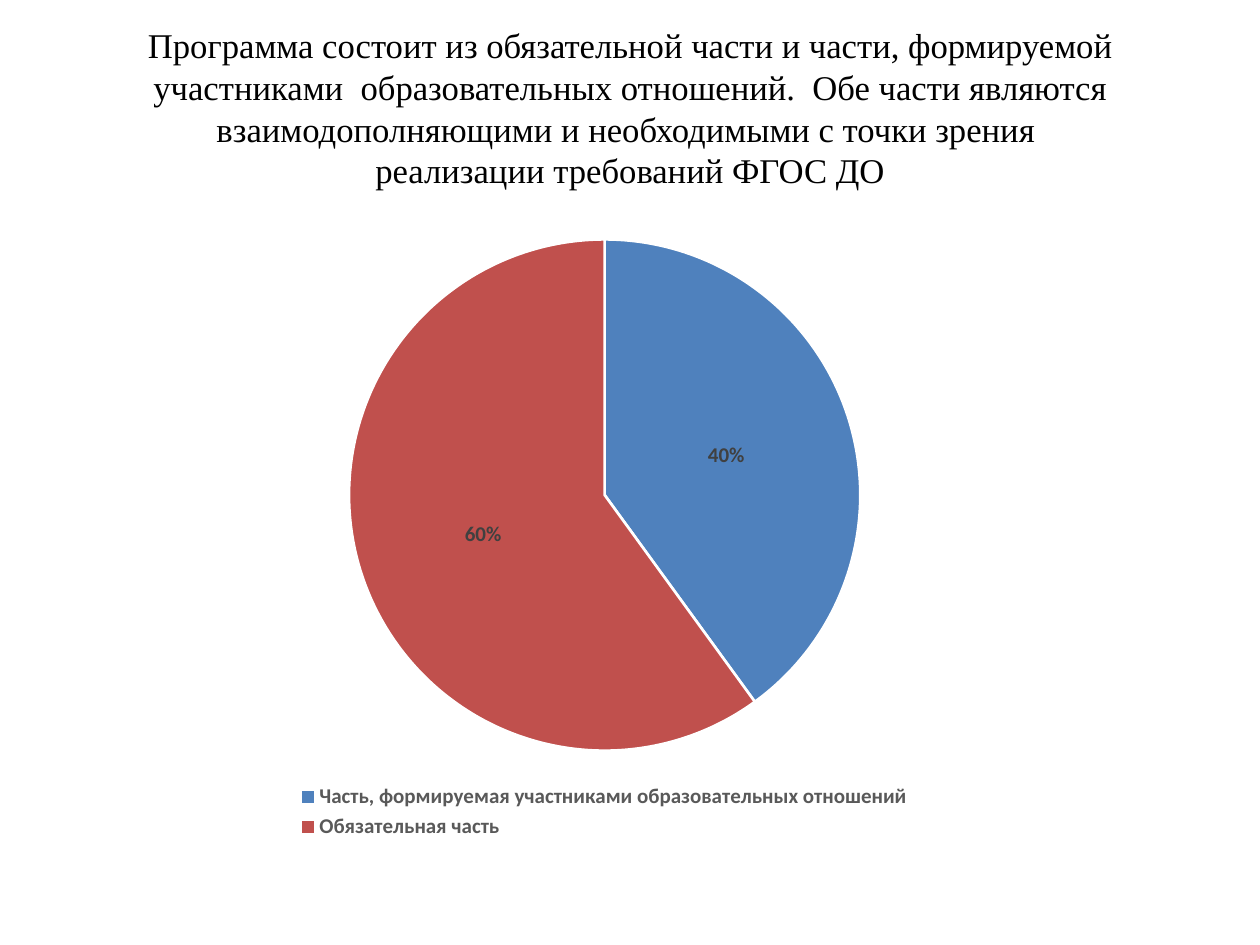
from lxml.etree import SubElement
from pptx import Presentation
from pptx.chart.data import CategoryChartData
from pptx.dml.color import RGBColor
from pptx.enum.chart import XL_CHART_TYPE as ChartType
from pptx.enum.chart import XL_LABEL_POSITION as LabelPosition
from pptx.enum.chart import XL_LEGEND_POSITION as LegendPosition
from pptx.enum.text import MSO_ANCHOR as Anchor
from pptx.enum.text import PP_ALIGN as Align
from pptx.oxml.ns import qn
from pptx.util import Cm, Pt

BLACK = RGBColor(0x00, 0x00, 0x00)
WHITE = RGBColor(0xFF, 0xFF, 0xFF)
DARK_GRAY = RGBColor(0x40, 0x40, 0x40)
GRAY = RGBColor(0x59, 0x59, 0x59)
BLUE = RGBColor(0x4F, 0x81, 0xBD)
RED = RGBColor(0xC0, 0x50, 0x4D)

TITLE = (
    "Программа состоит из обязательной части и части, формируемой "
    "участниками  образовательных отношений.  Обе части являются "
    "взаимодополняющими и необходимыми с точки зрения \v"
    "реализации требований ФГОС ДО"
)
# Category, share, colour
PARTS = [
    ("Часть, формируемая участниками образовательных отношений", 0.4, BLUE),
    ("Обязательная часть", 0.6, RED),
]
# Plot area as fractions of the chart
PLOT_LAYOUT = {"x": 0.17, "y": 0.03, "w": 0.66, "h": 0.82}


def set_values(target, values):
    for name, value in values.items():
        setattr(target, name, value)


def format_font(font, color, **values):
    set_values(font, values)
    font.color.rgb = color


def add_title(slide, text):
    shape = slide.shapes.add_textbox(Cm(1.27), Cm(0.49), Cm(22.86), Cm(5.83))
    frame = shape.text_frame
    set_values(frame, {"word_wrap": True, "vertical_anchor": Anchor.TOP,
                       "margin_top": 0, "margin_bottom": 0})
    paragraph = frame.paragraphs[0]
    paragraph.text = text
    set_values(paragraph, {"alignment": Align.CENTER, "line_spacing": Pt(23.8)})
    for run in paragraph.runs:
        format_font(run.font, BLACK, name="Times New Roman", size=Pt(19.8))


def set_plot_layout(chart, fractions):
    plot_area = chart.plots[0]._element.getparent()
    layout = plot_area.find(qn("c:layout"))
    if layout is None:
        layout = SubElement(plot_area, qn("c:layout"))
        plot_area.insert(0, layout)
    manual = SubElement(layout, qn("c:manualLayout"))
    settings = {"layoutTarget": "inner", "xMode": "edge", "yMode": "edge", **fractions}
    for name, value in settings.items():
        SubElement(manual, qn(f"c:{name}")).set("val", str(value))


def add_pie(slide, parts):
    data = CategoryChartData(number_format="0%")
    data.categories = [name for name, _, _ in parts]
    data.add_series("Series 1", [share for _, share, _ in parts])
    chart = slide.shapes.add_chart(
        ChartType.PIE, Cm(4.29), Cm(4.45), Cm(15.8), Cm(12.57), data).chart
    set_values(chart, {"has_title": False, "has_legend": True})
    format_font(chart.font, BLACK, name="Calibri", size=Pt(10))
    set_plot_layout(chart, PLOT_LAYOUT)

    # Slices
    plot = chart.plots[0]
    plot.vary_by_categories = True
    for index, (_, _, color) in enumerate(parts):
        slice_format = plot.series[0].points[index].format
        slice_format.fill.solid()
        slice_format.fill.fore_color.rgb = color
        slice_format.line.color.rgb = WHITE
        slice_format.line.width = Pt(1.5)

    # Labels and legend
    plot.has_data_labels = True
    set_values(plot.data_labels, {
        "show_value": True, "show_percentage": False, "number_format": "0%",
        "number_format_is_linked": False, "position": LabelPosition.CENTER})
    set_values(chart.legend, {"position": LegendPosition.BOTTOM,
                              "include_in_layout": False})
    for element, color in ((plot.data_labels, DARK_GRAY), (chart.legend, GRAY)):
        format_font(element.font, color, name="Calibri", size=Pt(12), bold=True)


def main():
    presentation = Presentation()
    set_values(presentation, {"slide_width": Cm(25.4), "slide_height": Cm(19.05)})
    slide = presentation.slides.add_slide(presentation.slide_layouts[6])
    add_title(slide, TITLE)
    add_pie(slide, PARTS)
    presentation.save("out.pptx")


if __name__ == "__main__":
    main()
